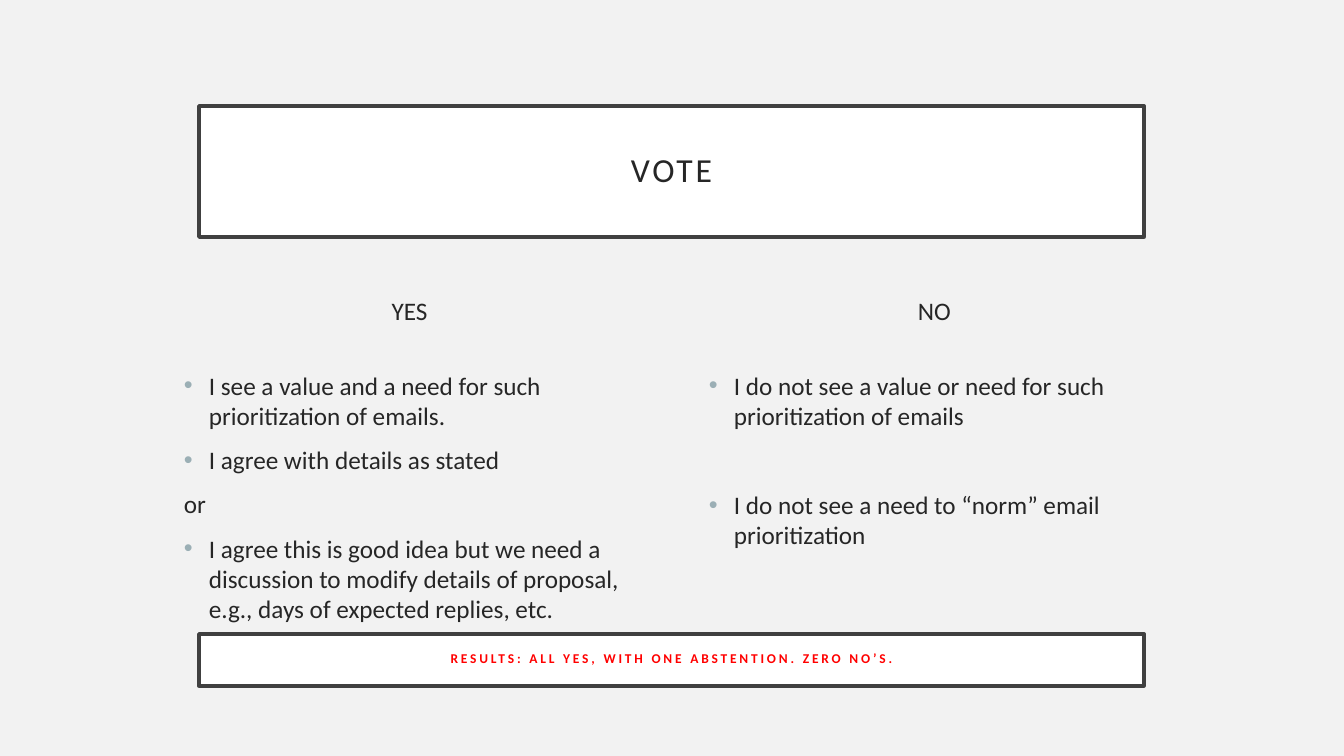
from pptx import Presentation
from pptx.dml.color import RGBColor
from pptx.enum.shapes import MSO_SHAPE as Shape
from pptx.enum.text import MSO_ANCHOR as Anchor, MSO_AUTO_SIZE as AutoSize, PP_ALIGN as Align
from pptx.oxml import parse_xml
from pptx.oxml.ns import nsdecls
from pptx.util import Emu, Pt

PX = 914400 / 100.8
BACKGROUND = RGBColor(0xF2, 0xF2, 0xF2)
WHITE = RGBColor(0xFF, 0xFF, 0xFF)
FRAME = RGBColor(0x40, 0x40, 0x40)
INK = RGBColor(0x26, 0x26, 0x26)
RED = RGBColor(0xFF, 0x00, 0x00)
BULLET = "9BAFB5"
INDENT = 25
GAP = 10  # points before a paragraph
LINE = 22  # points of one text line


def px(length):
    return Emu(round(length * PX))


def add_run(paragraph, text, size, color=INK, spacing=0, bold=False):
    run = paragraph.add_run()
    run.text = text
    run.font.name = "Calibri"
    run.font.size = Pt(size)
    run.font.color.rgb = color
    run.font.bold = bold
    if spacing:
        run.font._element.set("spc", str(spacing * 100))


presentation = Presentation()
presentation.slide_width, presentation.slide_height = px(1344), px(756)
slide = presentation.slides.add_slide(presentation.slide_layouts[5])
slide.background.fill.solid()
slide.background.fill.fore_color.rgb = BACKGROUND

# Framed boxes: title and results
title = slide.shapes.title
results = slide.shapes.add_shape(Shape.RECTANGLE, 0, 0, 0, 0)
results.shadow.inherit = False
frames = [
    (title, 106, 131, "VOTE", 24, INK, False, 0.9),
    (results, 634, 52, "RESULTS: ALL YES, WITH ONE ABSTENTION. ZERO NO’S.", 9.6, RED, True, 0.7),
]
for shape, top, height, text, size, color, bold, line_spacing in frames:
    shape.left, shape.top, shape.width, shape.height = px(199), px(top), px(945), px(height)
    shape.fill.solid()
    shape.fill.fore_color.rgb = WHITE
    shape.line.color.rgb = FRAME
    shape.line.width = Pt(2.5)
    frame = shape.text_frame
    frame.word_wrap = True
    frame.auto_size = AutoSize.NONE
    frame.vertical_anchor = Anchor.MIDDLE
    frame.margin_left = frame.margin_right = frame.margin_top = frame.margin_bottom = px(20)
    paragraph = frame.paragraphs[0]
    paragraph.alignment = Align.CENTER
    paragraph.line_spacing = line_spacing
    add_run(paragraph, text, size, color, spacing=2, bold=bold)

# Vote columns: heading, then (text, bulleted, points before)
columns = [
    (174, "YES", [
        ("I see a value and a need for such prioritization of emails.", True, GAP + LINE),
        ("I agree with details as stated", True, GAP),
        ("or", False, GAP),
        ("I agree this is good idea but we need a discussion to modify details of proposal, "
         "e.g., days of expected replies, etc.", True, GAP),
    ]),
    (699, "NO", [
        ("I do not see a value or need for such prioritization of emails", True, GAP + LINE),
        ("I do not see a need to “norm” email prioritization", True, 2 * GAP + LINE),
    ]),
]
for left, heading, points in columns:
    frame = slide.shapes.add_textbox(px(left), px(290), px(471), px(342)).text_frame
    frame.word_wrap = True
    paragraph = frame.paragraphs[0]
    paragraph.alignment = Align.CENTER
    paragraph.space_before = Pt(GAP)
    add_run(paragraph, heading, 18)
    for text, bulleted, before in points:
        paragraph = frame.add_paragraph()
        paragraph.space_before = Pt(before)
        if bulleted:
            properties = paragraph._p.get_or_add_pPr()
            properties.set("marL", str(px(INDENT)))
            properties.set("indent", str(-px(INDENT)))
            for xml in (
                f'<a:buClr {nsdecls("a")}><a:srgbClr val="{BULLET}"/></a:buClr>',
                f'<a:buFont {nsdecls("a")} typeface="Arial"/>',
                f'<a:buChar {nsdecls("a")} char="•"/>',
            ):
                properties.append(parse_xml(xml))
        add_run(paragraph, text, 18)

presentation.save("out.pptx")
